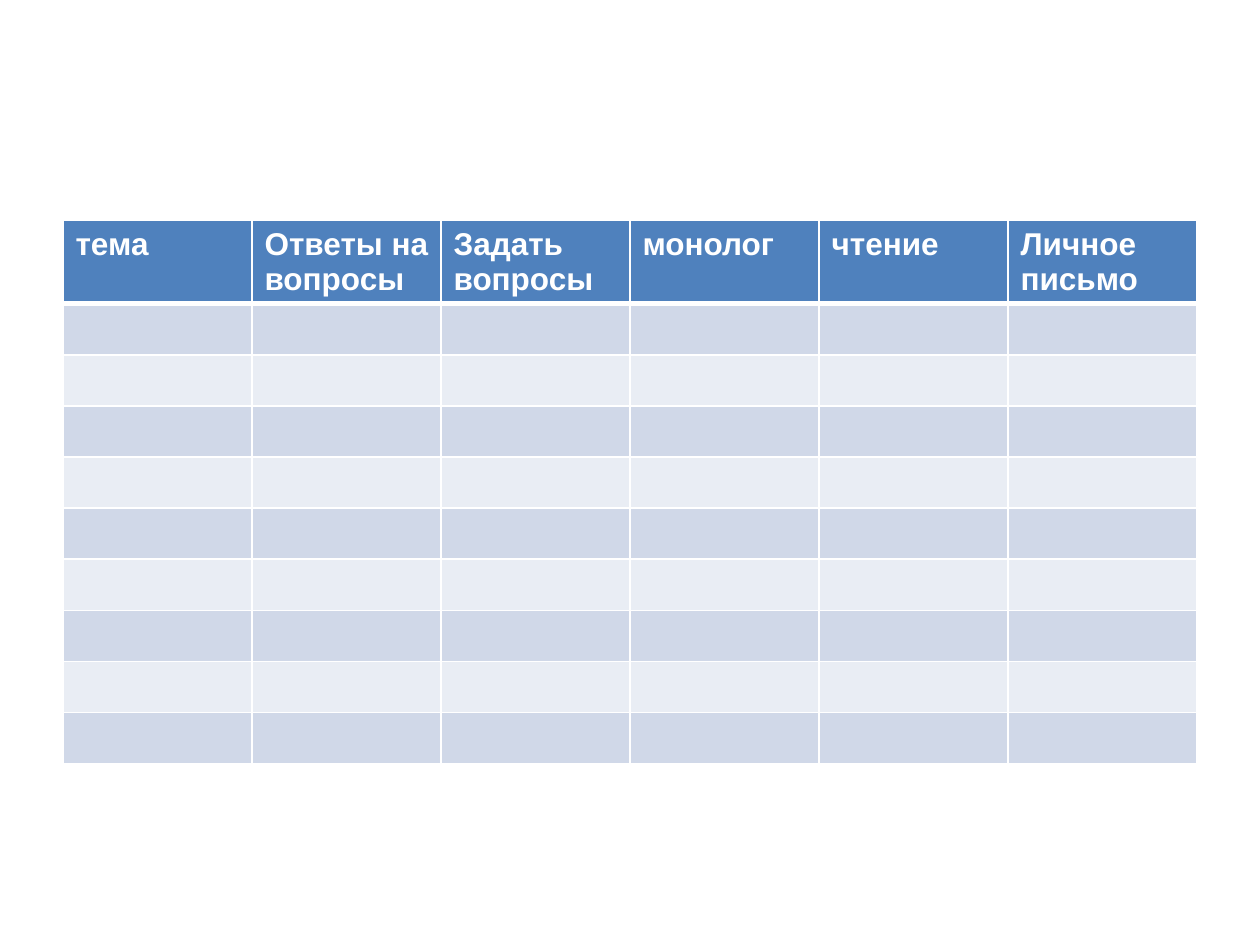
"""Build a slide with an empty planning table for exam topics and tasks."""
from lxml import etree
from pptx import Presentation
from pptx import util as u
from pptx.dml.color import RGBColor
from pptx.oxml.ns import qn

HEADINGS = ["тема", "Ответы на вопросы", "Задать вопросы", "монолог", "чтение", "Личное письмо"]
BODY_ROWS = 9
COLORS = {"header": "4F81BD", "odd": "D0D8E8", "even": "E9EDF4", "white": "FFFFFF"}
LEFT, TOP, WIDTH = 0.5, 1.75, 9
HEADER_HEIGHT, BODY_HEIGHT = 0.65, 3.65


def add_border(cell, side, width):
    line = etree.SubElement(cell._tc.get_or_add_tcPr(), qn(f"a:ln{side}"), w=str(u.Pt(width)))
    fill = etree.SubElement(line, qn("a:solidFill"))
    etree.SubElement(fill, qn("a:srgbClr"), val=COLORS["white"])


def format_cell(cell, content, fill, top=1, bottom=1, size=18, font="Arial", bold=True):
    for side, width in {"L": 1, "R": 1, "T": top, "B": bottom}.items():
        add_border(cell, side, width)
    cell.fill.solid()
    cell.fill.fore_color.rgb = RGBColor.from_string(COLORS[fill])
    para = cell.text_frame.paragraphs[0]
    if content:
        span = para.add_run()
        span.text = content
        style = span.font
        style.color.rgb = RGBColor.from_string(COLORS["white"])
    else:
        style = para.font
    style.size, style.name, style.bold = u.Pt(size), font, bold


def main():
    deck = Presentation()
    deck.slide_width, deck.slide_height = u.Inches(10), u.Inches(7.5)
    page = deck.slides.add_slide(deck.slide_layouts[6])
    table = page.shapes.add_table(
        BODY_ROWS + 1, len(HEADINGS), u.Inches(LEFT), u.Inches(TOP),
        u.Inches(WIDTH), u.Inches(HEADER_HEIGHT + BODY_HEIGHT)).table
    for column in table.columns:
        column.width = u.Inches(WIDTH / len(HEADINGS))
    for index, row in enumerate(table.rows):
        row.height = u.Inches(BODY_HEIGHT / BODY_ROWS if index else HEADER_HEIGHT)
        for cell, heading in zip(row.cells, HEADINGS):
            if index == 0:
                format_cell(cell, heading, "header", bottom=3)
            else:
                format_cell(cell, "", "odd" if index % 2 else "even",
                            top=3 if index == 1 else 1, bold=False)
    deck.save("out.pptx")


if __name__ == "__main__":
    main()
